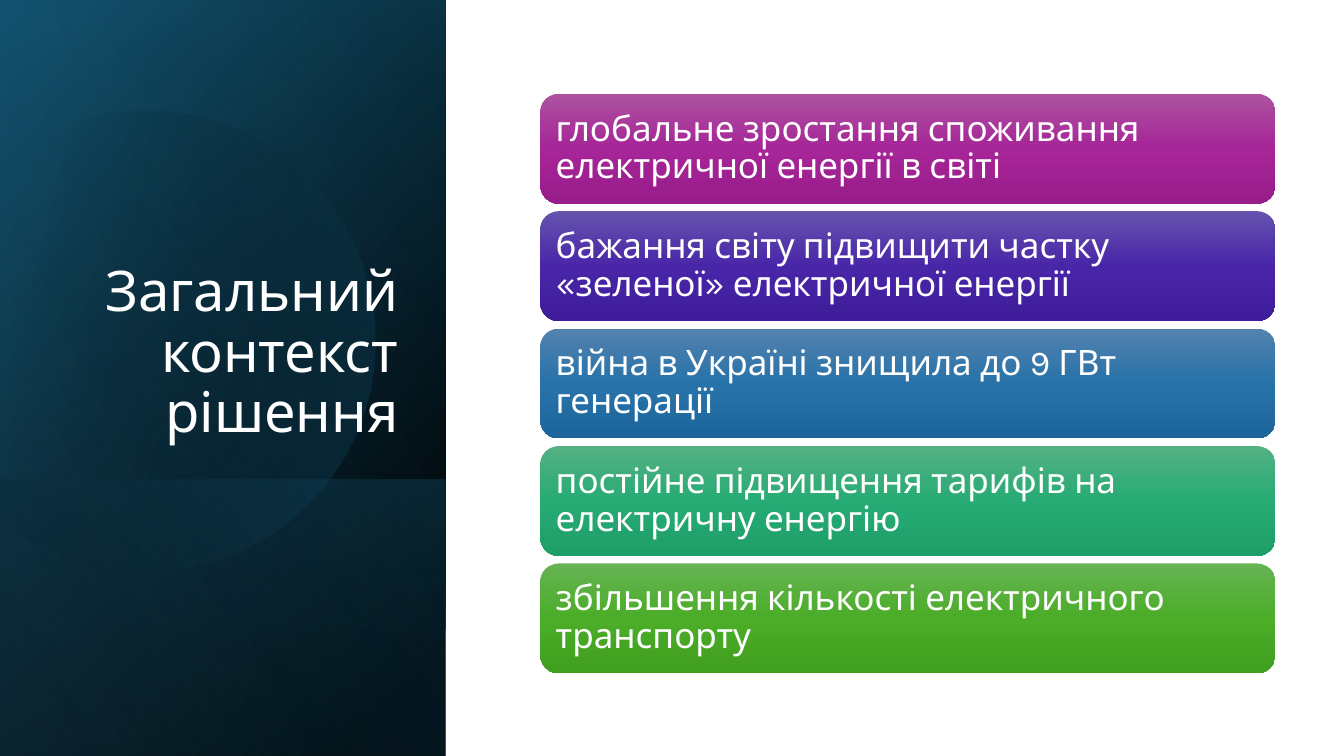
from math import cos, radians, sin

from lxml import etree
from pptx import Presentation
from pptx.dml.color import RGBColor
from pptx.enum.shapes import MSO_SHAPE
from pptx.enum.text import MSO_ANCHOR, PP_ALIGN
from pptx.oxml.ns import qn
from pptx.util import Inches, Pt

RECT = MSO_SHAPE.RECTANGLE
ROUND_RECT = MSO_SHAPE.ROUNDED_RECTANGLE
MIDDLE, BOTTOM = MSO_ANCHOR.MIDDLE, MSO_ANCHOR.BOTTOM
LEFT, RIGHT = PP_ALIGN.LEFT, PP_ALIGN.RIGHT

FONT = "Karla"
WHITE = "FFFFFF"
PANEL = (-1.54, 1.54, 7.5, 4.42)
LOWER_GLOW = (0.84, 3.92, 2.74, 4.42)

# Gradient stops: position %, colour, opacity %
BASE = [(8, "000000", 100), (100, "104862", 100)]
BLUE_TINT = [(0, "000000", 0), (99, "156082", 46)]
LOWER_TINT = [(2, "156082", 29), (100, "000000", 30)]
DISC_TINT = [(29, "000000", 0), (100, "156082", 43)]
LIGHT_TINT = [(0, "000000", 0), (99, "46B1E1", 11)]

DISC_TURN = 343.9
DISC_CENTER = (1.585, 3.345)
DISC_START = (1.49, 1.1)
DISC_RIGHT = [
    [(2.46, 1.12), (3.35, 1.77), (3.63, 2.75)],
    [(3.98, 3.97), (3.28, 5.23), (2.07, 5.58)],
    [(1.31, 5.8), (0.53, 5.61), (-0.03, 5.14)],
]
DISC_CUT = [(-0.15, 5.03), (-0.15, 1.75), (0, 1.61)]
DISC_LEFT = [
    [(0.23, 1.42), (0.5, 1.28), (0.8, 1.19)],
    [(1.03, 1.13), (1.26, 1.1), (1.49, 1.1)],
]

CARD_LEFT, CARD_WIDTH, CARD_HEIGHT = 5.36, 7.29, 1.09
FIRST_TOP, LAST_TOP = 0.93, 5.59
CARDS = [
    ("глобальне зростання споживання електричної енергії в світі",
     ("AC53A0", "A62598", "991C8B")),
    ("бажання світу підвищити частку «зеленої» електричної енергії",
     ("6553AE", "4926A8", "3E1C9A")),
    ("війна в Україні знищила до 9 ГВт генерації",
     ("5382AF", "2772A9", "1D669C")),
    ("постійне підвищення тарифів на електричну енергію",
     ("54B183", "27AB74", "1E9E68")),
    ("збільшення кількості електричного транспорту",
     ("66B354", "4BAD28", "409F1E")),
]


def rgb(color):
    return RGBColor.from_string(color)


def set_gradient(s, stops, angle):
    """Fill with a linear gradient, its angle clockwise in degrees; drop line and shadow."""
    s.shadow.inherit = False
    s.line.fill.background()
    s.fill.gradient()
    grad = s._element.spPr.find(qn("a:gradFill"))
    for child in list(grad):
        grad.remove(child)
    grad.set("rotWithShape", "1")
    stop_list = etree.SubElement(grad, qn("a:gsLst"))
    for position, color, opacity in stops:
        stop = etree.SubElement(stop_list, qn("a:gs"), pos=str(position * 1000))
        clr = etree.SubElement(stop, qn("a:srgbClr"), val=color)
        if opacity < 100:
            etree.SubElement(clr, qn("a:alpha"), val=str(opacity * 1000))
    etree.SubElement(grad, qn("a:lin"), ang=str(angle * 60000), scaled="0")


def add_panel(slide, box, stops, angle):
    """Add a mirrored rectangle turned by a quarter."""
    s = slide.shapes.add_shape(RECT, *map(Inches, box))
    s.rotation = 90
    s._element.spPr.find(qn("a:xfrm")).set("flipH", "1")
    set_gradient(s, stops, angle)


def trace_curves(start, curves, steps=16):
    """Return points along a chain of cubic Bezier curves."""
    points = []
    for c1, c2, end in curves:
        for i in range(1, steps + 1):
            t = i / steps
            u = 1 - t
            points.append(tuple(
                u**3 * a + 3 * u * u * t * b + 3 * u * t * t * c + t**3 * d
                for a, b, c, d in zip(start, c1, c2, end)))
        start = end
    return points


def turn(point, center, degrees):
    a = radians(degrees)
    dx, dy = point[0] - center[0], point[1] - center[1]
    return (Inches(center[0] + dx * cos(a) - dy * sin(a)),
            Inches(center[1] + dx * sin(a) + dy * cos(a)))


def add_disc(slide):
    """Add the cut disc, drawn upright and then rotated into place."""
    outline = ([DISC_START] + trace_curves(DISC_START, DISC_RIGHT) + DISC_CUT
               + trace_curves(DISC_CUT[-1], DISC_LEFT))
    points = [turn(p, DISC_CENTER, -DISC_TURN) for p in outline]
    builder = slide.shapes.build_freeform(*points[0])
    builder.add_line_segments(points[1:], close=True)
    s = builder.convert_to_shape()
    s.rotation = DISC_TURN
    set_gradient(s, DISC_TINT, 30)


def set_text(s, text, size, align, anchor):
    tf = s.text_frame
    tf.text = text
    tf.word_wrap = True
    tf.vertical_anchor = anchor
    p = tf.paragraphs[0]
    p.alignment = align
    p.line_spacing = 0.9
    font = p.runs[0].font
    font.name = FONT
    font.size = Pt(size)
    font.color.rgb = rgb(WHITE)


def add_title(slide, text):
    box = map(Inches, (0.64, 1.84, 3.41, 2.62))
    set_text(slide.shapes.add_textbox(*box), text, 40, RIGHT, BOTTOM)


def add_card(slide, top, text, colors):
    box = map(Inches, (CARD_LEFT, top, CARD_WIDTH, CARD_HEIGHT))
    s = slide.shapes.add_shape(ROUND_RECT, *box)
    set_gradient(s, [(50 * i, c, 100) for i, c in enumerate(colors)], 90)
    set_text(s, text, 25, LEFT, MIDDLE)
    tf = s.text_frame
    tf.margin_left = tf.margin_right = Inches(0.1)
    tf.margin_top = tf.margin_bottom = Inches(0.1)


def main():
    prs = Presentation()
    prs.slide_width, prs.slide_height = Inches(13.33), Inches(7.5)
    slide = prs.slides.add_slide(prs.slide_layouts[6])

    add_panel(slide, PANEL, BASE, 50)
    add_panel(slide, PANEL, BLUE_TINT, 30)
    add_panel(slide, LOWER_GLOW, LOWER_TINT, 130)
    add_disc(slide)
    add_panel(slide, PANEL, LIGHT_TINT, 120)
    add_title(slide, "Загальний контекст рішення")

    pitch = (LAST_TOP - FIRST_TOP) / (len(CARDS) - 1)
    for i, (text, colors) in enumerate(CARDS):
        add_card(slide, FIRST_TOP + i * pitch, text, colors)

    prs.save("out.pptx")


if __name__ == "__main__":
    main()
